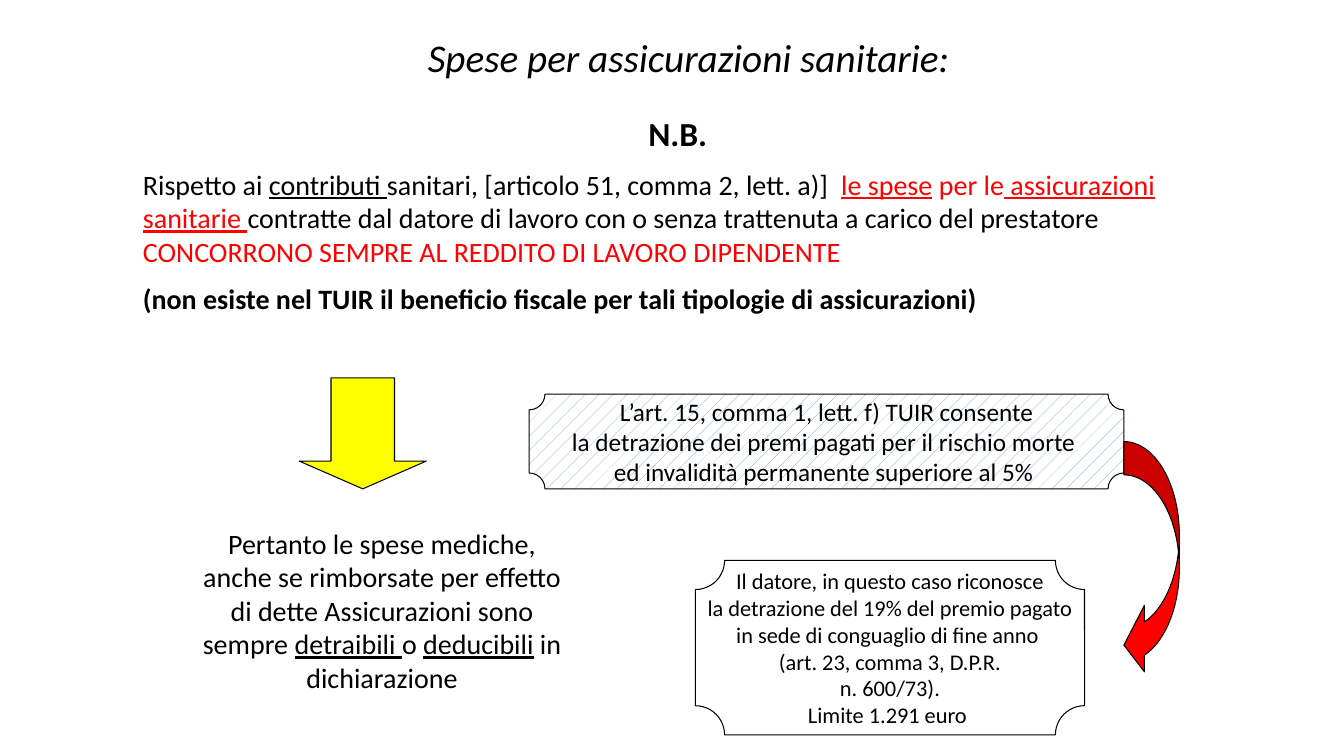
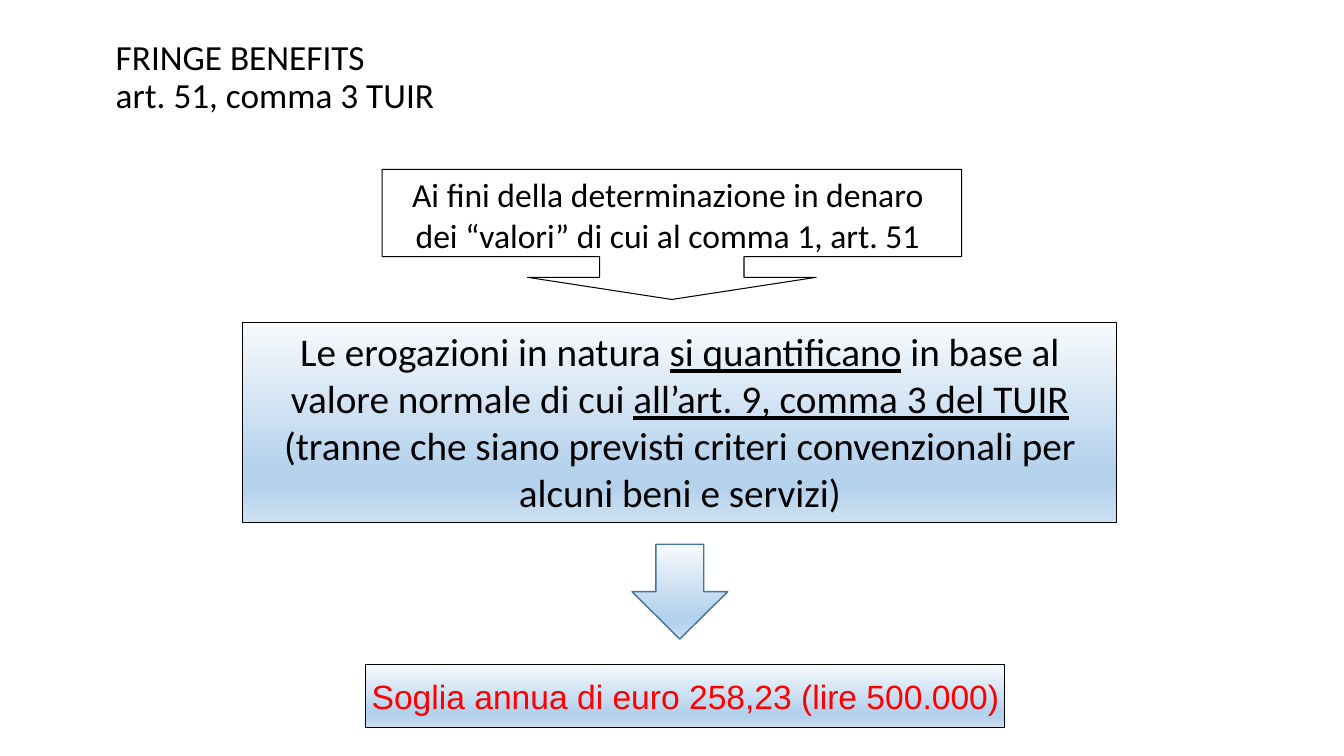
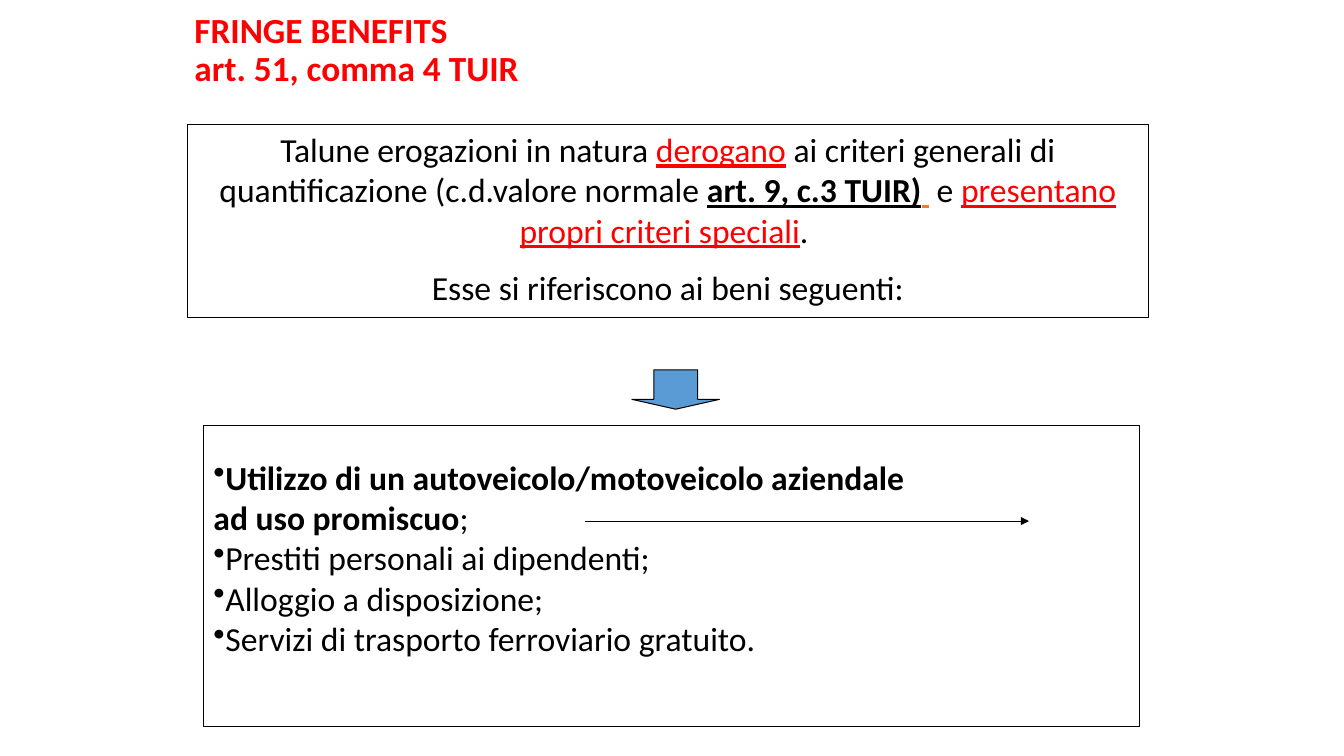
from copy import deepcopy
from dataclasses import dataclass

from lxml.etree import SubElement
from pptx import Presentation
from pptx.dml.color import RGBColor
from pptx.enum.dml import MSO_PATTERN
from pptx.enum.shapes import MSO_CONNECTOR, MSO_SHAPE as Preset
from pptx.enum.text import MSO_ANCHOR as Anchor, MSO_AUTO_SIZE, PP_ALIGN as Align
from pptx.oxml.ns import qn
from pptx.util import Pt

BLACK, RED, YELLOW, WHITE = "000000", "FF0000", "FFFF00", "FFFFFF"
BLUE, DARK_BLUE, ORANGE = "5B9BD5", "43739E", "ED7D31"
SOFT_BLUE = [(0, "F7FAFD"), (0.74, "B5D2EC"), (0.83, "B5D2EC"), (1, "CEE1F2")]


def rgb(value):
    return RGBColor.from_string(value)


@dataclass
class Part:
    text: str
    style: str = ""
    color: str = ""
    size: float = 0


class Deck:
    """Holds the shared style and the slide being drawn."""

    font = "Calibri"
    title_size = 25.2
    title_box = (678, 36.7)
    line_width = 0.75

    def __init__(self):
        self.presentation = Presentation()
        self.presentation.slide_width = Pt(960)
        self.presentation.slide_height = Pt(540)
        self.slide = None

    def new_slide(self):
        self.slide = self.presentation.slides.add_slide(self.presentation.slide_layouts[6])

    def add_paragraphs(self, shape, paragraphs, size, color=BLACK, font=None, style="",
                       align=Align.CENTER, anchor=Anchor.TOP, wrap=True, gap=0):
        frame = shape.text_frame
        frame.word_wrap = wrap
        frame.auto_size = MSO_AUTO_SIZE.NONE
        frame.vertical_anchor = anchor
        for index, parts in enumerate(paragraphs):
            paragraph = frame.paragraphs[0] if index == 0 else frame.add_paragraph()
            paragraph.alignment = align
            paragraph.space_before = Pt(gap if index else 0)
            for part in [Part(parts)] if isinstance(parts, str) else parts:
                run = paragraph.add_run()
                run.text = part.text
                run.font.name = font or self.font
                run.font.size = Pt(part.size or size)
                run.font.color.rgb = rgb(part.color or color)
                flags = style + part.style
                run.font.bold = "b" in flags
                run.font.italic = "i" in flags
                run.font.underline = "u" in flags
        return frame

    def text(self, box, paragraphs, size, **options):
        shape = self.slide.shapes.add_textbox(*map(Pt, box))
        return self.add_paragraphs(shape, paragraphs, size, **options)

    def title(self, left, top, lines, color=BLACK, style=""):
        frame = self.text((left, top, *self.title_box), [lines[:1]], self.title_size,
                          color=color, style=style, align=Align.LEFT, anchor=Anchor.MIDDLE)
        paragraph = frame.paragraphs[0]
        paragraph.line_spacing = 0.9
        first = paragraph.runs[0]
        for line in lines[1:]:
            paragraph.add_line_break()
            run = paragraph.add_run()
            run.text = line.text
            run.font.name, run.font.size = first.font.name, first.font.size
            run.font.bold = first.font.bold
            run.font.color.rgb = rgb(color)

    def shape(self, preset, box, fill=None, line=BLACK, width=None, adjust=()):
        shape = self.slide.shapes.add_shape(preset, *map(Pt, box))
        shape.shadow.inherit = False
        shape.line.color.rgb = rgb(line)
        shape.line.width = Pt(width or self.line_width)
        for index, value in enumerate(adjust):
            shape.adjustments[index] = value
        if fill is None:
            shape.fill.background()
        elif isinstance(fill, list):
            self.gradient(shape, fill)
        else:
            shape.fill.solid()
            shape.fill.fore_color.rgb = rgb(fill)
        return shape

    def gradient(self, shape, stops):
        shape.fill.gradient()
        shape.fill.gradient_angle = 270
        stop_list = shape._element.spPr.find(qn("a:gradFill")).find(qn("a:gsLst"))
        while len(stop_list) < len(stops):
            stop_list.append(deepcopy(stop_list[0]))
        for stop, (position, color) in zip(shape.fill.gradient_stops, stops):
            stop.position = position
            stop.color.rgb = rgb(color)

    def hatch(self, shape, front, back):
        shape.fill.patterned()
        shape.fill.pattern = MSO_PATTERN.PERCENT_5
        shape.fill.fore_color.rgb = rgb(front)
        shape.fill.back_color.rgb = rgb(back)

    def bullet(self, paragraph):
        properties = paragraph._p.get_or_add_pPr()
        properties.set("marL", "0")
        properties.set("indent", "0")
        SubElement(properties, qn("a:buChar")).set("char", "•")

    def arrow(self, start, end):
        connector = self.slide.shapes.add_connector(
            MSO_CONNECTOR.STRAIGHT, *map(Pt, (*start, *end)))
        connector.line.color.rgb = rgb(BLACK)
        connector.line.width = Pt(self.line_width)
        properties = connector._element.spPr
        SubElement(properties.find(qn("a:ln")), qn("a:tailEnd")).set("type", "triangle")
        SubElement(properties, qn("a:effectLst"))


def health_insurance(deck):
    deck.new_slide()
    deck.text((95, 77, 778.3, 157.7), [
        [Part("N.B.", "b", size=24)],
        [Part("Rispetto ai "), Part("contributi ", "u"),
         Part("sanitari, [articolo 51, comma 2, lett. a)]  "),
         Part("le spese", "u", RED), Part(" per le", "", RED),
         Part(" assicurazioni sanitarie ", "u", RED),
         Part("contratte dal datore di lavoro con o senza trattenuta a carico del prestatore "),
         Part("CONCORRONO SEMPRE AL REDDITO DI LAVORO DIPENDENTE", "", RED)],
        [Part("(non esiste nel TUIR il beneficio fiscale per tali tipologie di assicurazioni)", "b")],
    ], 20, align=Align.LEFT, gap=10).paragraphs[0].alignment = Align.CENTER
    deck.text((213.8, 20.2, 555.8, 41), ["Spese per assicurazioni sanitarie:"], 28, style="i")
    deck.shape(Preset.DOWN_ARROW, (213.8, 270, 90.7, 79.2), YELLOW, adjust=(0.5, 0.25))
    deck.text((133.9, 372.2, 277.9, 128.2), [
        [Part("Pertanto le spese mediche, anche se rimborsate per effetto di dette "
              "Assicurazioni sono sempre "),
         Part("detraibili ", "u"), Part("o "), Part("deducibili", "u"),
         Part(" in dichiarazione")],
    ], 20)
    deduction = deck.shape(Preset.PLAQUE, (378, 281.5, 424.8, 67.7), adjust=(0.167,))
    deck.hatch(deduction, BLUE, WHITE)
    deck.add_paragraphs(deduction, [
        "L’art. 15, comma 1, lett. f) TUIR consente",
        "la detrazione dei premi pagati per il rischio morte ",
        "ed invalidità permanente superiore al 5% ",
    ], 18, anchor=Anchor.MIDDLE, wrap=False)
    employer = deck.shape(Preset.PLAQUE, (496.8, 400.3, 277.9, 124.6), adjust=(0.167,))
    deck.add_paragraphs(employer, [
        "Il datore, in questo caso riconosce",
        "la detrazione del 19% del premio pagato",
        "in sede di conguaglio di fine anno ",
        "(art. 23, comma 3, D.P.R.",
        "n. 600/73).",
        "Limite 1.291 euro ",
    ], 16, anchor=Anchor.MIDDLE, wrap=False)
    deck.shape(Preset.CURVED_LEFT_ARROW, (802.8, 315.4, 39.6, 169.2), RED,
               adjust=(0.6, 1.2, 0.37))


def normal_value(deck):
    deck.new_slide()
    deck.title(75.6, 37.4, [Part("FRINGE BENEFITS"), Part("art. 51, comma 3 TUIR")])
    rule = deck.shape(Preset.RECTANGLE, (173.5, 230.4, 624.2, 142.6), SOFT_BLUE)
    deck.add_paragraphs(rule, [
        [Part("Le erogazioni in natura "), Part("si quantificano", "u"),
         Part(" in base al valore normale di cui "),
         Part("all’art. 9, comma 3 del TUIR", "u"),
         Part(" (tranne che siano previsti criteri convenzionali per alcuni beni e servizi)")],
    ], 28)
    deck.shape(Preset.DOWN_ARROW_CALLOUT, (272.9, 121, 414, 92.9),
               adjust=(1.11, 1.11, 0.17, 0.67))
    deck.text((272.9, 121, 408.2, 65.5), [
        "Ai fini della determinazione in denaro dei “valori” di cui al comma 1, art. 51",
    ], 24)
    threshold = deck.shape(Preset.RECTANGLE, (261.4, 474.5, 456.5, 45.4), SOFT_BLUE)
    deck.add_paragraphs(threshold, ["Soglia annua di euro 258,23 (lire 500.000)"], 24,
                        color=RED, font="Arial", anchor=Anchor.MIDDLE, wrap=False)
    deck.shape(Preset.DOWN_ARROW, (451.4, 388.8, 68.4, 67.7), SOFT_BLUE, DARK_BLUE, 1)


def special_criteria(deck):
    deck.new_slide()
    deck.title(131.8, 18, [Part("FRINGE BENEFITS"), Part("art. 51, comma 4 TUIR")], RED, "b")
    criteria = deck.shape(Preset.RECTANGLE, (133.9, 88.6, 686.2, 138.2))
    deck.add_paragraphs(criteria, [
        [Part("Talune erogazioni in natura "), Part("derogano", "u", RED),
         Part(" ai criteri generali di quantificazione (c.d.valore normale "),
         Part("art. 9, c.3 TUIR)", "bu"), Part(" ", "bu", ORANGE), Part(" e "),
         Part("presentano propri criteri speciali", "u", RED), Part(". ")],
        "Esse si riferiscono ai beni seguenti:",
    ], 24, gap=12)
    goods = deck.shape(Preset.RECTANGLE, (145.4, 303.8, 668.9, 215.3))
    frame = deck.add_paragraphs(goods, [
        [Part("Utilizzo di un autoveicolo/motoveicolo aziendale", "b")],
        [Part("ad uso promiscuo", "b"), Part(";")],
        "Prestiti personali ai dipendenti;",
        "Alloggio a disposizione;",
        "Servizi di trasporto ferroviario gratuito.",
    ], 24, align=Align.LEFT, anchor=Anchor.MIDDLE)
    frame.margin_bottom = Pt(30)
    for index, paragraph in enumerate(frame.paragraphs):
        if index != 1:
            deck.bullet(paragraph)
    deck.arrow((417.6, 372.2), (735.1, 372.2))
    deck.shape(Preset.DOWN_ARROW, (451.4, 264.2, 62.6, 28.1), BLUE, adjust=(0.5, 0.25))


def main():
    deck = Deck()
    health_insurance(deck)
    normal_value(deck)
    special_criteria(deck)
    deck.presentation.save("out.pptx")


if __name__ == "__main__":
    main()
